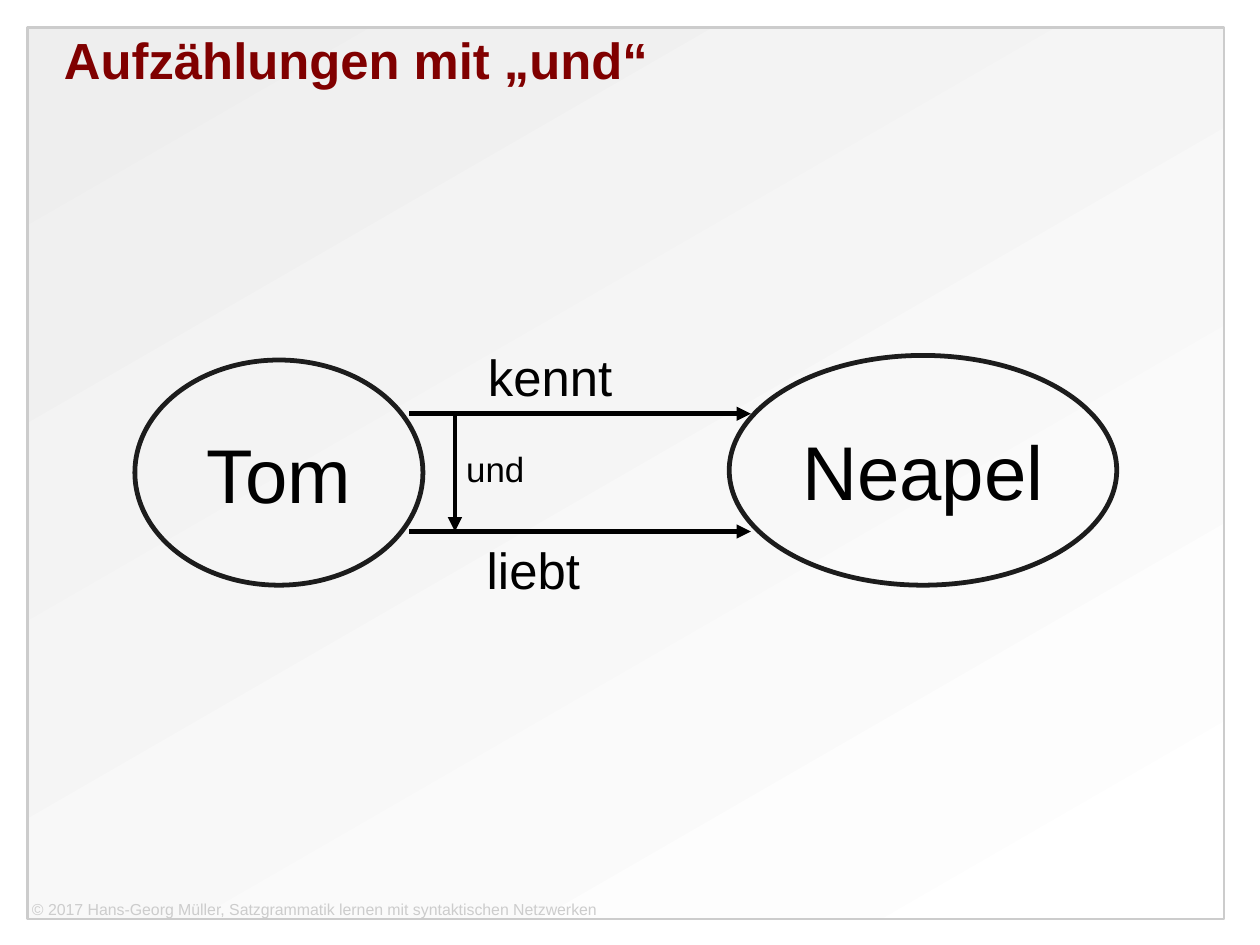
import pptx
import pptx.util
import pptx.dml.color
import pptx.enum.shapes
import pptx.enum.text
import pptx.oxml.ns
import lxml.etree

Inches, Pt = pptx.util.Inches, pptx.util.Pt
SHAPE = pptx.enum.shapes.MSO_SHAPE
ANCHOR = pptx.enum.text.MSO_ANCHOR
ALIGN = pptx.enum.text.PP_ALIGN
qn = pptx.oxml.ns.qn

# Content
FONT = "Arial"
COLORS = {"title": "800000", "ink": "000000", "ellipse": "1C1C1C",
          "frame": "CCCCCC", "shade": "EEEEEE", "light": "FFFFFF"}
TITLE = "Aufzählungen mit „und“"
FOOTER = "© 2017 Hans-Georg Müller, Satzgrammatik lernen mit syntaktischen Netzwerken"
# Text, then left, top, width, height
NODES = [("Tom", (1.18, 3.15, 2.52, 1.97)),
         ("Neapel", (6.38, 3.11, 3.39, 2.01))]
# Text, size, then left, top, width, height
LABELS = [("und", 22, (3.98, 3.87, 0.71, 0.44)),
          ("kennt", 32, (4.17, 2.98, 1.35, 0.64)),
          ("liebt", 32, (4.16, 4.66, 1.35, 0.64))]
# Verb arrows run between the nodes, the "und" arrow links them
START_X, END_X, LINK_X = 3.58, 6.57, 3.98
VERB_Y = (3.62, 4.65)
ARROWS = [(START_X, y, END_X, y) for y in VERB_Y]
ARROWS.append((LINK_X, VERB_Y[0], LINK_X, VERB_Y[1]))


def color(name):
    return pptx.dml.color.RGBColor.from_string(COLORS[name])


def inches(values):
    return [Inches(v) for v in values]


def set_line(line, name, width):
    line.color.rgb = color(name)
    line.width = Pt(width)


def set_text(s, text, size, name="ink", bold=False, align=ALIGN.LEFT,
             anchor=ANCHOR.TOP, insets=(0.1, 0.05), wrap=True):
    tf = s.text_frame
    tf.text = text
    tf.word_wrap = wrap
    tf.auto_size = pptx.enum.text.MSO_AUTO_SIZE.NONE
    tf.vertical_anchor = anchor
    tf.margin_left = tf.margin_right = Inches(insets[0])
    tf.margin_top = tf.margin_bottom = Inches(insets[1])
    p = tf.paragraphs[0]
    p.alignment = align
    font = p.runs[0].font
    font.name, font.size, font.bold = FONT, Pt(size), bold
    font.color.rgb = color(name)


def add_frame(slide):
    s = slide.shapes.add_shape(SHAPE.RECTANGLE, *inches((0.24, 0.24, 10.47, 7.8)))
    s.shadow.inherit = False
    s.fill.gradient()
    s.fill.gradient_angle = 300
    for stop, name in zip(s.fill.gradient_stops, ("shade", "light")):
        stop.color.rgb = color(name)
    set_line(s.line, "frame", 1.5)
    # Behind the title
    slide.shapes._spTree.insert(2, s._element)


def add_node(slide, text, box):
    s = slide.shapes.add_shape(SHAPE.OVAL, *inches(box))
    s.shadow.inherit = False
    s.fill.background()
    set_line(s.line, "ellipse", 3)
    set_text(s, text, 48, align=ALIGN.CENTER, anchor=ANCHOR.MIDDLE,
             insets=(0.12, 0.07), wrap=False)


def add_arrow(slide, ends):
    s = slide.shapes.add_connector(
        pptx.enum.shapes.MSO_CONNECTOR.STRAIGHT, *inches(ends))
    set_line(s.line, "ink", 3)
    lxml.etree.SubElement(s.line._get_or_add_ln(), qn("a:tailEnd"), type="triangle")
    lxml.etree.SubElement(s._element.spPr, qn("a:effectLst"))


def main():
    prs = pptx.Presentation()
    # The page is 28 by 21 cm
    prs.slide_width, prs.slide_height = inches((28 / 2.54, 21 / 2.54))
    slide = prs.slides.add_slide(prs.slide_layouts[5])

    # Title, frame and footer
    title = slide.shapes.title
    title.left, title.top, title.width, title.height = inches((0.56, 0.25, 9.92, 1))
    set_text(title, TITLE, 32, "title", bold=True, insets=(0, 0))
    add_frame(slide)
    footer = slide.shapes.add_textbox(*inches((0.24, 7.87, 10.47, 0.16)))
    set_text(footer, FOOTER, 10, "frame", insets=(0.04, 0))

    # Sentence network
    for ends in ARROWS:
        add_arrow(slide, ends)
    for text, box in NODES:
        add_node(slide, text, box)
    for text, size, box in LABELS:
        set_text(slide.shapes.add_textbox(*inches(box)), text, size)

    prs.save("out.pptx")


if __name__ == "__main__":
    main()
